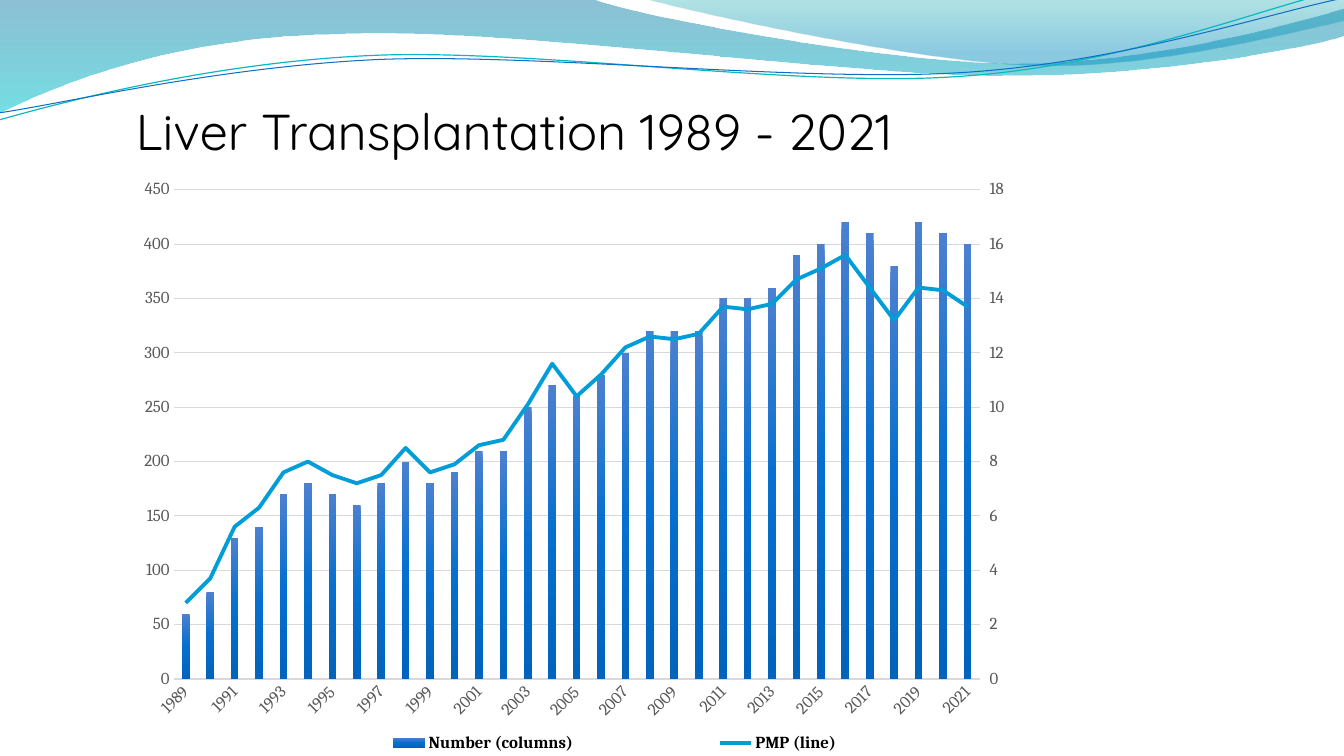
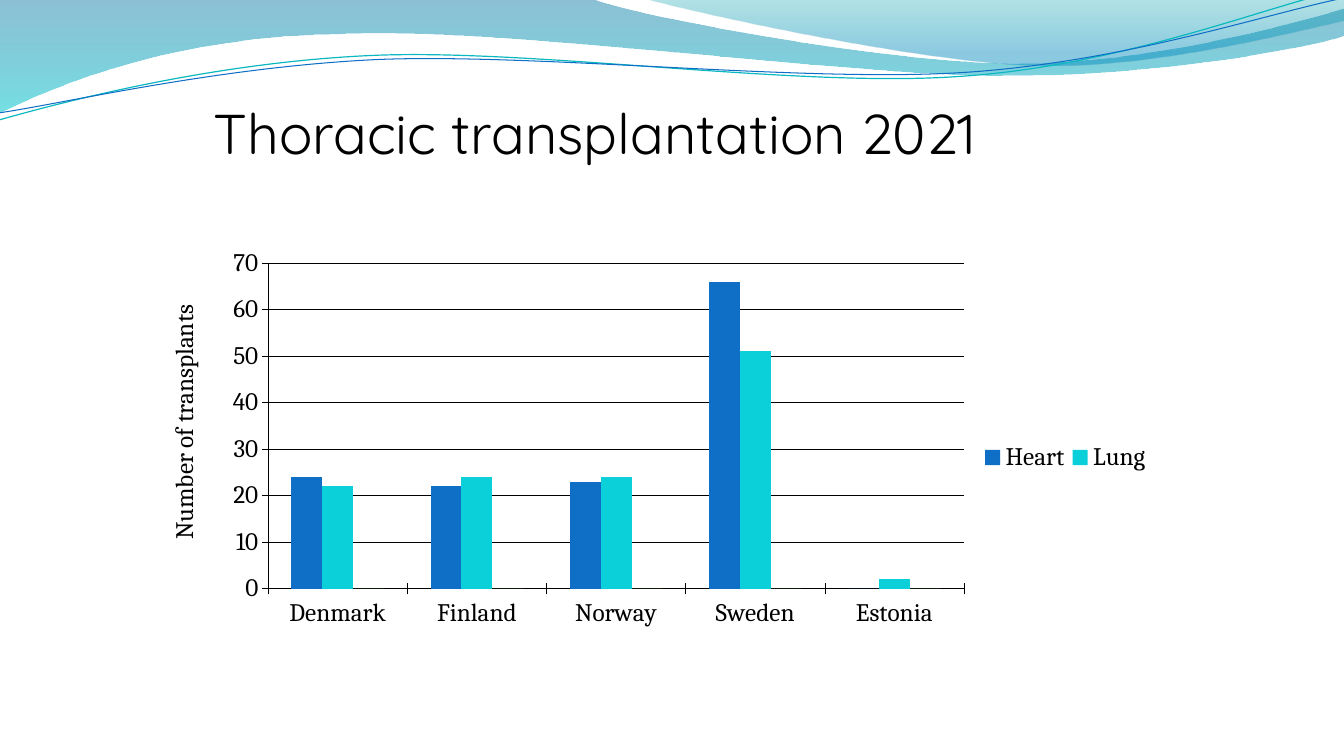
from lxml import etree
from pptx import Presentation
from pptx.chart.axis import ValueAxis
from pptx.chart.data import CategoryChartData
from pptx.dml.color import RGBColor
from pptx.enum.chart import XL_CHART_TYPE as ChartType
from pptx.enum.chart import XL_LEGEND_POSITION as LegendPos
from pptx.enum.chart import XL_MARKER_STYLE as Marker
from pptx.enum.chart import XL_TICK_MARK as Tick
from pptx.enum.text import MSO_ANCHOR
from pptx.oxml import parse_xml
from pptx.oxml.ns import nsdecls, qn
from pptx.util import Inches, Pt

BLACK = RGBColor(0x00, 0x00, 0x00)
GREY = RGBColor(0x59, 0x59, 0x59)
PALE_GREY = RGBColor(0xD9, 0xD9, 0xD9)
TEAL = RGBColor(0x0A, 0xB8, 0xBF)
BLUE = RGBColor(0x0F, 0x6F, 0xC6)
SKY = RGBColor(0x00, 0x9D, 0xD9)
CYAN = RGBColor(0x0B, 0xD0, 0xD9)
GREEN = RGBColor(0x7C, 0xCA, 0x62)

BAND_STOPS = [(0, RGBColor(0x00, 0x74, 0xA1), 45), (100, RGBColor(0x00, 0xC6, 0xCF), 55)]
CREST_STOPS = [(0, RGBColor(0x00, 0xA1, 0xA9), 30), (80, RGBColor(0x00, 0x8B, 0xBF), 45)]
COLUMN_STOPS = [
    (0, RGBColor(0x4C, 0x80, 0xD0), 100),
    (50, RGBColor(0x06, 0x6F, 0xCF), 100),
    (100, RGBColor(0x00, 0x63, 0xBD), 100),
]

TITLE_FONT = "Quicksand"
CHART_FONT = "Cambria"
LIVER_BOX = (1.25, 1.67, 8.89, 5.93)
THORACIC_BOX = (1.52, 2.25, 10.04, 4.28)

BAND = [
    (0, 0), (5.87, -0.01),
    (6.34, 0.17, 8.84, 0.63, 10.11, 0.63),
    (11.37, 0.63, 12.77, 0.26, 13.33, 0.09),
    (13.34, 0.36),
    (13.11, 0.44, 11.59, 0.76, 9.94, 0.75),
    (8.29, 0.75, 5.09, 0.28, 3.43, 0.34),
    (1.72, 0.36, 0.61, 0.83, -0.02, 1.13),
]
CREST = [
    (6.38, -0.01),
    (6.79, 0.11, 9.09, 0.62, 10.25, 0.65),
    (11.4, 0.69, 12.82, 0.32, 13.33, 0.21),
    (13.33, 0),
]
TEAL_WAVE = [
    (-0.01, 1.19),
    (0.63, 1.01, 2.1, 0.62, 3.69, 0.55),
    (5.27, 0.48, 7.89, 0.87, 9.49, 0.76),
    (11.1, 0.66, 12.51, 0.08, 13.3, -0.1),
]
BLUE_WAVE = [
    (-0.01, 1.12),
    (0.62, 1.03, 2.18, 0.66, 3.77, 0.59),
    (5.37, 0.53, 7.96, 0.82, 9.55, 0.72),
    (11.14, 0.62, 12.55, 0.14, 13.33, -0.02),
]

YEARS = [str(year) for year in range(1989, 2022)]
LIVER_NUMBER = [
    60, 80, 130, 140, 170, 180, 170, 160, 180, 200, 180,
    190, 210, 210, 250, 270, 260, 280, 300, 320, 320, 320,
    350, 350, 360, 390, 400, 420, 410, 380, 420, 410, 400,
]
LIVER_PMP = [
    2.8, 3.7, 5.6, 6.3, 7.6, 8, 7.5, 7.2, 7.5, 8.5, 7.6,
    7.9, 8.6, 8.8, 10.1, 11.6, 10.4, 11.2, 12.2, 12.6, 12.5, 12.7,
    13.7, 13.6, 13.8, 14.7, 15.1, 15.6, 14.4, 13.2, 14.4, 14.3, 13.7,
]
COUNTRIES = ["Denmark", "Finland", "Norway", "Sweden", "Estonia"]
THORACIC = [
    ("Heart", [24, 22, 23, 66, 0], BLUE),
    ("Lung", [22, 24, 24, 51, 2], CYAN),
    ("Series 3", [0, 0, 0, 0, 0], GREEN),
]


def apply(obj, **values):
    for name, value in values.items():
        setattr(obj, name, value)


def first(element, tag):
    return next(element.iter(qn(tag)))


def set_font(font, size, color, name=CHART_FONT, bold=False):
    apply(font, size=Pt(size), name=name, bold=bold)
    font.color.rgb = color


def set_line(line, color, width):
    line.color.rgb = color
    line.width = Pt(width)


def set_gradient(fill, element, stops):
    fill.gradient()
    fill.gradient_angle = 270
    gs_list = first(element, "a:gsLst")
    for gs in list(gs_list):
        gs_list.remove(gs)
    for pos, color, alpha in stops:
        gs = etree.SubElement(gs_list, qn("a:gs"), pos=str(pos * 1000))
        clr = etree.SubElement(gs, qn("a:srgbClr"), val=str(color))
        etree.SubElement(clr, qn("a:alpha"), val=str(alpha * 1000))


def add_outline(s, segments, closed):
    ends = [(Inches(seg[-2]), Inches(seg[-1])) for seg in segments]
    builder = s.shapes.build_freeform(*ends[0], scale=1.0)
    builder.add_line_segments(ends[1:], close=closed)
    sp = builder.convert_to_shape()
    sp.shadow.inherit = False
    for line_to, seg in zip(list(sp.element.iter(qn("a:lnTo"))), segments[1:]):
        if len(seg) == 6:
            line_to.tag = qn("a:cubicBezTo")
            for i in (0, 2):
                x, y = Inches(seg[i]) - sp.left, Inches(seg[i + 1]) - sp.top
                line_to.insert(i // 2, etree.Element(qn("a:pt"), x=str(x), y=str(y)))
    return sp


def add_waves(s):
    tree = s.slide_layout.shapes.element
    for placeholder in list(s.slide_layout.placeholders):
        tree.remove(placeholder.element)
    waves = []
    for segments, stops in ((BAND, BAND_STOPS), (CREST, CREST_STOPS)):
        sp = add_outline(s, segments, True)
        set_gradient(sp.fill, sp.element, stops)
        sp.line.fill.background()
        waves.append(sp)
    for segments, color, width in ((TEAL_WAVE, TEAL, 0.85), (BLUE_WAVE, BLUE, 0.75)):
        sp = add_outline(s, segments, False)
        sp.fill.background()
        set_line(sp.line, color, width)
        waves.append(sp)
    for sp in waves:
        tree.append(sp.element)


def add_title(s, text, box, size):
    tf = s.shapes.add_textbox(*map(Inches, box)).text_frame
    apply(tf, word_wrap=True, vertical_anchor=MSO_ANCHOR.TOP)
    p = tf.paragraphs[0]
    p.line_spacing = 0.8
    r = p.add_run()
    r.text = text
    set_font(r.font, size, BLACK, TITLE_FONT)


def add_column_chart(s, box, categories, series, size, gap):
    data = CategoryChartData()
    data.categories = categories
    for name, values in series:
        data.add_series(name, values)
    frame = s.shapes.add_chart(ChartType.COLUMN_CLUSTERED, *map(Inches, box), data)
    chart = frame.chart
    chart.has_title = False
    set_font(chart.font, size, BLACK)
    apply(chart.plots[0], gap_width=gap, overlap=0, vary_by_categories=False)
    return chart


def style_axis(axis, size, color, tick, line=None, grid=None):
    apply(axis, major_tick_mark=tick, minor_tick_mark=Tick.NONE)
    set_font(axis.tick_labels.font, size, color)
    if line:
        set_line(axis.format.line, *line)
    else:
        axis.format.line.fill.background()
    axis.has_major_gridlines = grid is not None
    if grid:
        set_line(axis.major_gridlines.format.line, *grid)


def set_scale(axis, maximum, unit):
    apply(axis, minimum_scale=0, maximum_scale=maximum, major_unit=unit)


def set_layout(parent, index, box, lengths, inner=False):
    for old in parent.findall(qn("c:layout")):
        parent.remove(old)
    layout = etree.Element(qn("c:layout"))
    manual = etree.SubElement(layout, qn("c:manualLayout"))
    settings = {"layoutTarget": "inner"} if inner else {}
    settings.update(xMode="edge", yMode="edge")
    width, height = box[2:]
    for tag, length, whole in zip("xywh", lengths, (width, height) * 2):
        settings[tag] = length / whole
    for tag, value in settings.items():
        etree.SubElement(manual, qn("c:" + tag), val=str(value))
    parent.insert(index, layout)


def add_legend(chart, position, size, box, lengths, bold=False):
    chart.has_legend = True
    apply(chart.legend, position=position, include_in_layout=False)
    set_font(chart.legend.font, size, BLACK, bold=bold)
    legend = first(chart.element, "c:legend")
    set_layout(legend, 1, box, lengths)
    return legend


def move_to_right_axis(chart):
    plot_area = first(chart.element, "c:plotArea")
    bar = plot_area.find(qn("c:barChart"))
    ser = bar.findall(qn("c:ser"))[-1]
    for tag in ser.findall(qn("c:invertIfNegative")):
        ser.remove(tag)
    ns = nsdecls("c")
    line = parse_xml(
        f'<c:lineChart {ns}><c:grouping val="standard"/><c:varyColors val="0"/>'
        '<c:marker val="1"/><c:axId val="501"/><c:axId val="502"/></c:lineChart>'
    )
    line.insert(2, ser)
    bar.addnext(line)
    cat_axis = parse_xml(
        f'<c:catAx {ns}><c:axId val="501"/><c:scaling/><c:delete val="1"/>'
        '<c:axPos val="b"/><c:crossAx val="502"/><c:crosses val="autoZero"/></c:catAx>'
    )
    val_axis = parse_xml(
        f'<c:valAx {ns}><c:axId val="502"/><c:scaling/><c:delete val="0"/>'
        '<c:axPos val="r"/><c:numFmt formatCode="General" sourceLinked="0"/>'
        '<c:majorTickMark val="out"/><c:minorTickMark val="none"/>'
        '<c:tickLblPos val="nextTo"/><c:crossAx val="501"/><c:crosses val="max"/></c:valAx>'
    )
    plot_area.findall(qn("c:valAx"))[-1].addnext(cat_axis)
    cat_axis.addnext(val_axis)
    return ValueAxis(val_axis)


def add_liver_chart(s):
    series = [("Number (columns)", LIVER_NUMBER), ("PMP (line)", LIVER_PMP)]
    chart = add_column_chart(s, LIVER_BOX, YEARS, series, 10, 219)
    left_axis = chart.value_axis
    right_axis = move_to_right_axis(chart)
    style_axis(chart.category_axis, 12, GREY, Tick.NONE, line=(PALE_GREY, 1))
    style_axis(left_axis, 12, GREY, Tick.NONE, grid=(PALE_GREY, 0.75))
    style_axis(right_axis, 12, GREY, Tick.OUTSIDE)
    set_scale(left_axis, 450, 50)
    set_scale(right_axis, 18, 2)
    first(first(chart.element, "c:catAx"), "a:bodyPr").set("rot", "-2700000")
    columns, pmp = chart.plots[0].series[0], chart.plots[1].series[0]
    set_gradient(columns.format.fill, first(chart.element, "c:ser"), COLUMN_STOPS)
    set_line(pmp.format.line, SKY, 2.75)
    pmp.smooth = False
    pmp.marker.style = Marker.NONE
    add_legend(chart, LegendPos.BOTTOM, 12, LIVER_BOX, (1.25, 5.52, 7.19, 0.36), bold=True)


def add_thoracic_chart(s):
    series = [(name, values) for name, values, _ in THORACIC]
    chart = add_column_chart(s, THORACIC_BOX, COUNTRIES, series, 18, 150)
    thin = (BLACK, 0.25)
    style_axis(chart.category_axis, 18, BLACK, Tick.CROSS, line=thin)
    style_axis(chart.value_axis, 18, BLACK, Tick.CROSS, line=thin, grid=thin)
    set_scale(chart.value_axis, 70, 10)
    for ser, (_, _, color) in zip(chart.plots[0].series, THORACIC):
        ser.format.fill.solid()
        ser.format.fill.fore_color.rgb = color
    r = chart.value_axis.axis_title.text_frame.paragraphs[0].add_run()
    r.text = "Number of transplants"
    set_font(r.font, 18, BLACK)
    title = first(first(chart.element, "c:valAx"), "c:title")
    first(title, "a:bodyPr").set("rot", "-5400000")
    set_layout(title, 1, THORACIC_BOX, (0.09, 0.73))
    plot_area = first(chart.element, "c:plotArea")
    set_layout(plot_area, 0, THORACIC_BOX, (1.14, 0.36, 6.9, 3.23), inner=True)
    legend = add_legend(chart, LegendPos.RIGHT, 18, THORACIC_BOX, (8.17, 2.14, 1.75, 0.3))
    legend.insert(1, parse_xml(
        f'<c:legendEntry {nsdecls("c")}><c:idx val="2"/><c:delete val="1"/></c:legendEntry>'
    ))


def main():
    prs = Presentation()
    apply(prs, slide_width=Inches(13.33), slide_height=Inches(7.5))
    liver, thoracic = [prs.slides.add_slide(prs.slide_layouts[6]) for _ in range(2)]
    add_waves(liver)
    add_title(liver, "Liver Transplantation 1989 - 2021", (1.25, 1.06, 9, 0.62), 36)
    add_liver_chart(liver)
    add_title(thoracic, "Thoracic transplantation 2021", (2.02, 1.06, 8.75, 1.25), 40)
    add_thoracic_chart(thoracic)
    prs.save("out.pptx")


if __name__ == "__main__":
    main()
